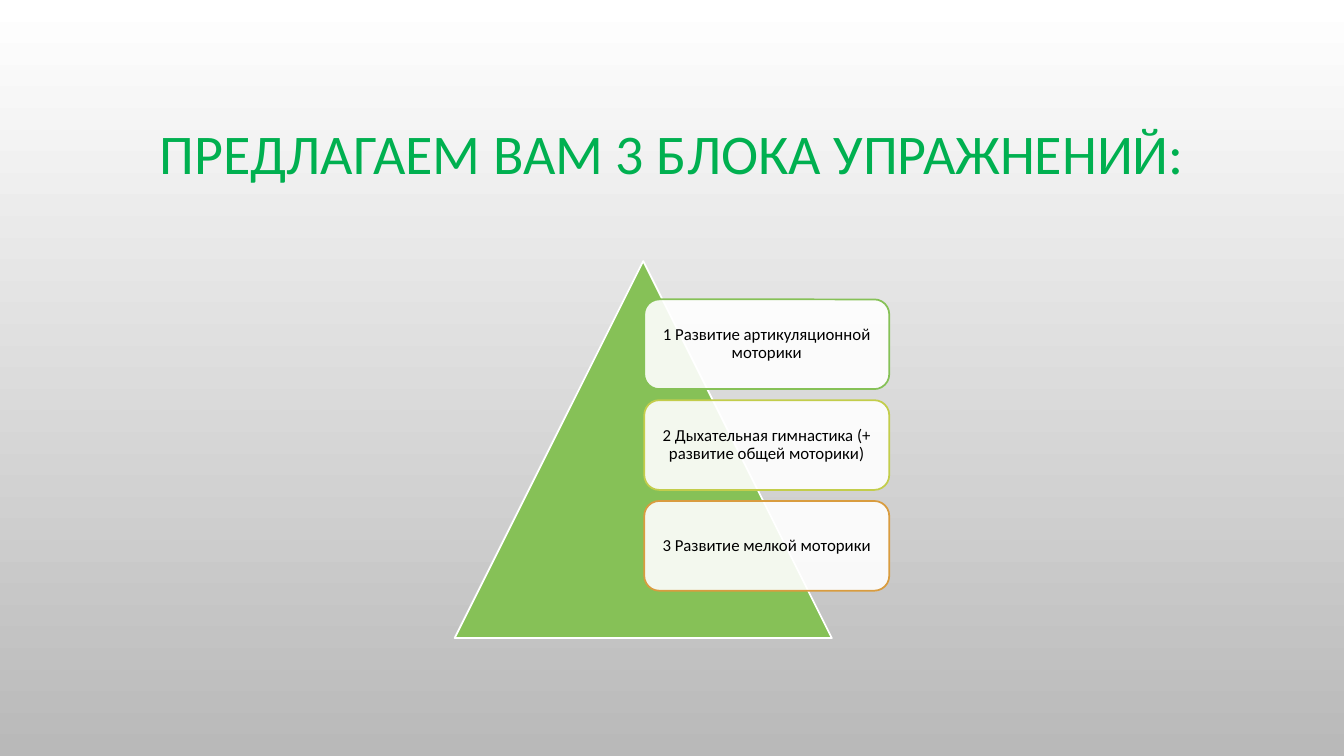
from dataclasses import dataclass

from lxml import etree
from pptx import Presentation
from pptx.dml.color import RGBColor
from pptx.enum.shapes import MSO_SHAPE
from pptx.enum.text import MSO_ANCHOR, MSO_AUTO_SIZE, PP_ALIGN
from pptx.oxml.ns import qn
from pptx.shapes.autoshape import Shape
from pptx.shapes.shapetree import GroupShapes
from pptx.slide import Slide
from pptx.text.text import TextFrame
from pptx.util import Emu, Pt

TRIANGLE = MSO_SHAPE.ISOSCELES_TRIANGLE
ROUNDED = MSO_SHAPE.ROUNDED_RECTANGLE
MIDDLE = MSO_ANCHOR.MIDDLE
NO_AUTOFIT = MSO_AUTO_SIZE.NONE
CENTER = PP_ALIGN.CENTER

EMU_PER_PX = 9144  # 100 px to the inch
TITLE_ONLY_LAYOUT = 5
FONT = "Calibri"
LINE_WIDTH = Pt(1.25)

WHITE = RGBColor(0xFF, 0xFF, 0xFF)
GREY = RGBColor(0xB9, 0xB9, 0xB9)
BLACK = RGBColor(0x00, 0x00, 0x00)
TITLE_GREEN = RGBColor(0x00, 0xB0, 0x50)
LEAF_GREEN = RGBColor(0x86, 0xC1, 0x57)
LIME = RGBColor(0xC3, 0xCD, 0x4B)
ORANGE = RGBColor(0xD9, 0x9C, 0x3F)

BLOCK_LEFT, BLOCK_TOP = 639, 297
BLOCK_WIDTH, BLOCK_HEIGHT = 243, 89
BLOCK_MARGIN = 5
BLOCK_OPACITY = 90
# Gaps between blocks are one eighth of the block height
BLOCK_STEP = round(BLOCK_HEIGHT * 9 / 8)


@dataclass(frozen=True)
class Block:
    text: str
    outline: RGBColor


BLOCKS = [
    Block("1 Развитие артикуляционной моторики", LEAF_GREEN),
    Block("2 Дыхательная гимнастика (+ развитие общей моторики)", LIME),
    Block("3 Развитие мелкой моторики", ORANGE),
]


def px(length: int) -> Emu:
    return Emu(length * EMU_PER_PX)


def write_text(frame: TextFrame, text: str, size: int, color: RGBColor) -> None:
    frame.word_wrap = True
    frame.auto_size = NO_AUTOFIT
    frame.vertical_anchor = MIDDLE
    para = frame.paragraphs[0]
    para.alignment = CENTER
    para.line_spacing = 0.9
    span = para.add_run()
    span.text = text
    span.font.name = FONT
    span.font.size = Pt(size)
    span.font.color.rgb = color


def add_outlined(shapes: GroupShapes, preset: MSO_SHAPE, left: int, top: int,
                 width: int, height: int, fill: RGBColor,
                 outline: RGBColor) -> Shape:
    shape = shapes.add_shape(preset, px(left), px(top), px(width), px(height))
    shape.shadow.inherit = False
    shape.fill.solid()
    shape.fill.fore_color.rgb = fill
    shape.line.color.rgb = outline
    shape.line.width = LINE_WIDTH
    return shape


def set_opacity(shape: Shape, percent: int) -> None:
    color = shape._element.spPr.find(qn("a:solidFill")).find(qn("a:srgbClr"))
    etree.SubElement(color, qn("a:alpha")).set("val", str(percent * 1000))


def add_block(shapes: GroupShapes, block: Block, top: int) -> None:
    box = add_outlined(shapes, ROUNDED, BLOCK_LEFT, top, BLOCK_WIDTH,
                       BLOCK_HEIGHT, WHITE, block.outline)
    set_opacity(box, BLOCK_OPACITY)
    frame = box.text_frame
    frame.margin_left = frame.margin_right = px(BLOCK_MARGIN)
    frame.margin_top = frame.margin_bottom = px(BLOCK_MARGIN)
    write_text(frame, block.text, 12, BLACK)


def paint_background(page: Slide) -> None:
    fill = page.background.fill
    fill.gradient()
    fill.gradient_angle = 270
    for stop, color in zip(fill.gradient_stops, (WHITE, GREY)):
        stop.color.rgb = color


def place_title(page: Slide) -> None:
    title = page.shapes.title
    title.left, title.top = px(100), px(68)
    title.width, title.height = px(1133), px(175)
    write_text(title.text_frame, "ПРЕДЛАГАЕМ ВАМ 3 БЛОКА УПРАЖНЕНИЙ:", 40,
               TITLE_GREEN)


def add_pyramid(page: Slide) -> None:
    shapes = page.shapes.add_group_shape().shapes
    add_outlined(shapes, TRIANGLE, 451, 259, 374, 374, LEAF_GREEN, WHITE)
    for index, block in enumerate(BLOCKS):
        add_block(shapes, block, BLOCK_TOP + index * BLOCK_STEP)


def main() -> None:
    deck = Presentation()
    deck.slide_width, deck.slide_height = px(1333), px(750)
    page = deck.slides.add_slide(deck.slide_layouts[TITLE_ONLY_LAYOUT])
    paint_background(page)
    place_title(page)
    add_pyramid(page)
    deck.save("out.pptx")


if __name__ == "__main__":
    main()
